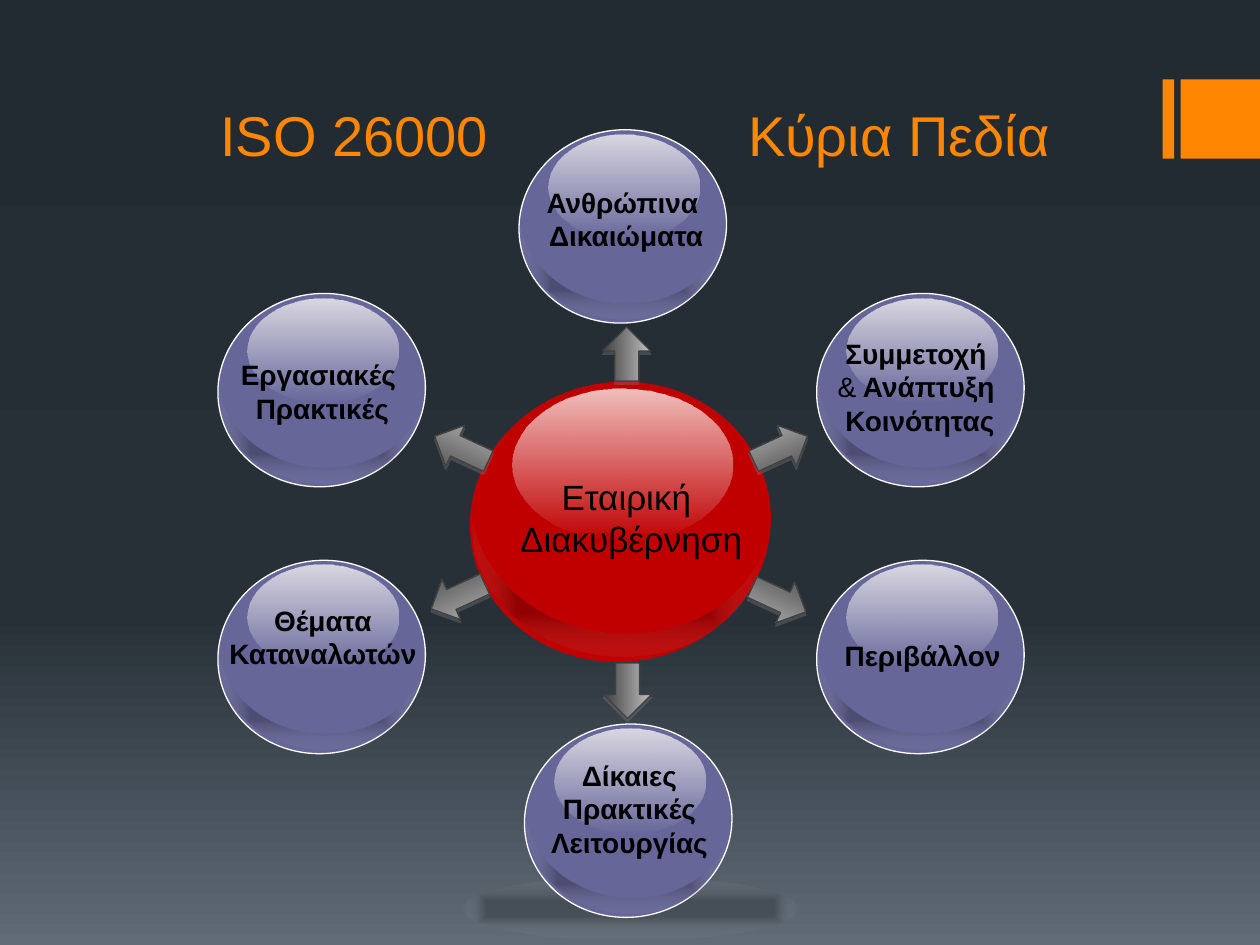
from dataclasses import dataclass
from lxml.etree import SubElement as Sub
from pptx import Presentation as Deck
from pptx.dml.color import RGBColor as Rgb
from pptx.enum.shapes import MSO_SHAPE as Form
from pptx.enum.text import MSO_ANCHOR as Anchor, MSO_AUTO_SIZE as Auto, PP_ALIGN as Align
from pptx.oxml import parse_xml as to_xml
from pptx.oxml.ns import nsdecls, qn
from pptx.util import Cm, Pt


@dataclass(frozen=True)
class Theme:
    font: str = "Arial"
    accent: str = "FF8600"
    core: str = "C00000"
    ball: str = "666699"
    rim: str = "FFFFFF"
    ink: str = "000000"
    edge: str = "404040"
    shade: str = "808080"
    back: tuple = ((0, "232B32", 100), (65, "273037", 100), (100, "606B76", 100))
    gloss: tuple = ((0, "FFFCF9", 77), (100, "FFFFFF", 0))
    dim: tuple = ((24, "000000", 24), (100, "FFFFFF", 0))
    floor: tuple = ((24, "000000", 22), (100, "FFFFFF", 0))
    steel: tuple = ((0, "BFBFBF", 100), (100, "404040", 100))
    title: int = 32
    hub: int = 20
    label: int = 16
    line: float = 0.75


def put(item, **vals):
    for name, val in vals.items():
        setattr(item, name, val)


class Page:
    def __init__(self, deck, theme):
        self.theme = theme
        self.slide = deck.slides.add_slide(deck.slide_layouts[6])

    def blend(self, owner, stops, radial=False):
        marks = "".join(
            f'<a:gs pos="{pos * 1000}"><a:srgbClr val="{tint}">'
            f'<a:alpha val="{alpha * 1000}"/></a:srgbClr></a:gs>'
            for pos, tint, alpha in stops)
        way = ('<a:path path="shape"><a:fillToRect l="50000" t="50000" r="50000" b="50000"/></a:path>'
               if radial else '<a:lin ang="5400000" scaled="0"/>')
        grad = to_xml(f'<a:gradFill {nsdecls("a")} rotWithShape="1">'
                      f'<a:gsLst>{marks}</a:gsLst>{way}</a:gradFill>')
        old = owner.find(".//" + qn("a:solidFill"))
        old.getparent().replace(old, grad)

    def back(self):
        self.slide.background.fill.solid()
        self.slide.background.fill.fore_color.rgb = Rgb.from_string(self.theme.ink)
        self.blend(self.slide.element, self.theme.back)

    def shape(self, form, box, fill, line=None, turn=0, radial=False):
        item = self.slide.shapes.add_shape(form, *map(Cm, box))
        item.shadow.inherit = False
        item.rotation = turn
        item.fill.solid()
        if isinstance(fill, str):
            item.fill.fore_color.rgb = Rgb.from_string(fill)
        else:
            self.blend(item.element, fill, radial)
        if line:
            item.line.color.rgb = Rgb.from_string(line)
            item.line.width = Pt(self.theme.line)
        else:
            item.line.fill.background()
        return item

    def ball(self, x, y, fill, line=None, size=1):
        def part(dx, dy, w, h):
            return x + dx * size, y + dy * size, w * size, h * size

        self.shape(Form.OVAL, part(0, 0, 4.19, 3.89), fill, line, 350.9)
        self.shape(Form.OVAL, part(0.6, 0.09, 3.05, 2.11), self.theme.gloss)
        moon = self.shape(Form.MOON, part(1.13, 0.93, 1.7, 4.06), self.theme.dim,
                          turn=275.9, radial=True)
        moon.adjustments[0] = 0.19

    def arrow(self, box, turn, flips):
        item = self.shape(Form.RIGHT_ARROW, box, self.theme.steel, self.theme.edge, turn)
        frame = item.element.spPr.find(qn("a:xfrm"))
        for flip in flips:
            frame.set("flip" + flip, "1")
        glow = item.element.spPr.find(qn("a:effectLst"))
        drop = Sub(glow, qn("a:outerShdw"), blurRad="0", dist=str(Pt(1.8)),
                   dir="5400000", rotWithShape="0")
        tint = Sub(drop, qn("a:srgbClr"), val=self.theme.shade)
        Sub(tint, qn("a:alpha"), val="35000")

    def text(self, box, lines, size, tint, bold=False, align=Align.CENTER,
             anchor=Anchor.TOP, fit=Auto.SHAPE_TO_FIT_TEXT, tab=None):
        frame = self.slide.shapes.add_textbox(*map(Cm, box)).text_frame
        put(frame, word_wrap=True, vertical_anchor=anchor, auto_size=fit)
        for num, line in enumerate(lines):
            para = frame.add_paragraph() if num else frame.paragraphs[0]
            para.alignment = align
            if tab:
                stops = Sub(para._p.get_or_add_pPr(), qn("a:tabLst"))
                Sub(stops, qn("a:tab"), pos=str(Cm(tab)), algn="l")
            for bit in filter(None, line.partition("&")):
                run = para.add_run()
                run.text = bit
                put(run.font, name=self.theme.font, size=Pt(size), bold=bold and bit != "&")
                run.font.color.rgb = Rgb.from_string(tint)


def main():
    deck = Deck()
    put(deck, slide_width=Cm(25.4), slide_height=Cm(19.05))
    theme = Theme()
    page = Page(deck, theme)
    page.back()
    for left, width in ((23.44, 0.23), (23.8, 1.6)):
        page.shape(Form.RECTANGLE, (left, 1.6, width, 1.6), theme.accent)

    page.ball(9.47, 7.7, theme.core, size=1.45)
    page.shape(Form.OVAL, (9.32, 17.68, 6.76, 1.27), theme.floor, radial=True)
    west, east, high, low = 4.39, 16.46, 5.92, 11.3
    for x, y in ((10.46, 2.62), (east, high), (east, low),
                 (10.57, 14.6), (west, low), (west, high)):
        page.ball(x, y, theme.ball, theme.rim)

    page.text((9.88, 9.47, 5.69, 2.06), ["Εταιρική ", "Διακυβέρνηση"], theme.hub, theme.ink)
    labels = (
        ((16.21, 6.65, 4.67, 2.41), ["Συμμετοχή ", "& Ανάπτυξη ", "Κοινότητας"]),
        ((10.49, 3.61, 4.27, 1.7), ["Ανθρώπινα ", "Δικαιώματα"]),
        ((16.48, 12.75, 4.24, 0.99), ["Περιβάλλον"]),
        ((10.52, 15.16, 4.34, 2.41), ["Δίκαιες Πρακτικές Λειτουργίας"]),
        ((4.34, 7.09, 4.32, 1.7), ["Εργασιακές ", "Πρακτικές"]),
        ((4.06, 12.04, 4.9, 1.7), ["Θέματα Καταναλωτών"]),
    )
    for box, lines in labels:
        page.text(box, lines, theme.label, theme.ink, bold=True)

    arrows = (
        ((15.14, 8.59, 1.19, 0.91), 335.1, ""),
        ((8.71, 8.59, 1.19, 0.91), 24.9, "H"),
        ((8.64, 11.58, 1.19, 0.89), 335.1, "HV"),
        ((15.11, 11.63, 1.19, 0.91), 24.9, "V"),
        ((12.09, 6.65, 1.09, 0.97), 90, "H"),
        ((12.09, 13.44, 1.12, 0.97), 270, "HV"),
    )
    for box, turn, flips in arrows:
        page.arrow(box, turn, flips)

    page.text((4.19, 1.02, 20.29, 2.49), ["ISO 26000\tΚύρια Πεδία"], theme.title, theme.accent,
              align=Align.LEFT, anchor=Anchor.BOTTOM, fit=Auto.NONE, tab=10.64)
    deck.save("out.pptx")


if __name__ == "__main__":
    main()
